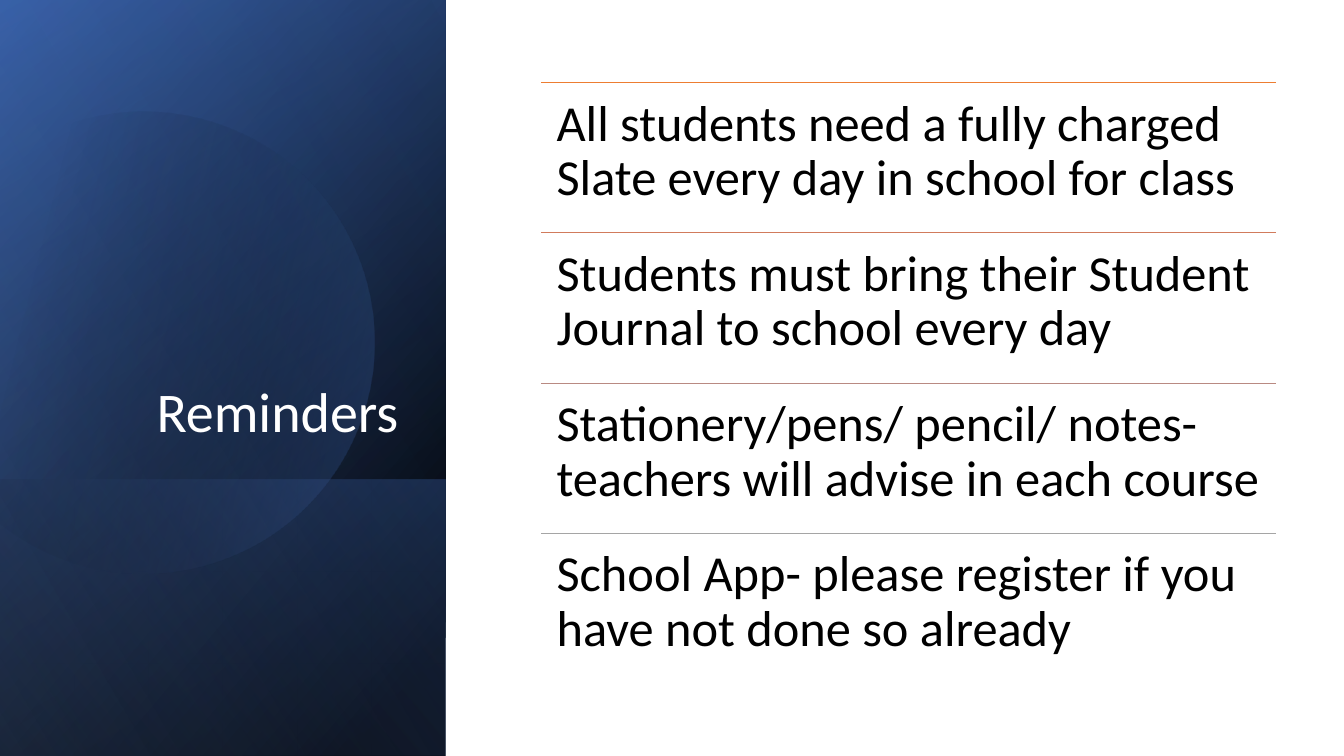
from math import cos, radians, sin

from pptx import Presentation
from pptx.dml.color import RGBColor
from pptx.enum.shapes import MSO_CONNECTOR, MSO_SHAPE
from pptx.enum.text import MSO_ANCHOR, PP_ALIGN
from pptx.oxml import parse_xml
from pptx.oxml.ns import nsdecls
from pptx.util import Inches, Pt

RECTANGLE = MSO_SHAPE.RECTANGLE
STRAIGHT = MSO_CONNECTOR.STRAIGHT
TOP, BOTTOM = MSO_ANCHOR.TOP, MSO_ANCHOR.BOTTOM
LEFT, RIGHT = PP_ALIGN.LEFT, PP_ALIGN.RIGHT

BLACK = RGBColor(0x00, 0x00, 0x00)
WHITE = RGBColor(0xFF, 0xFF, 0xFF)
NAVY = RGBColor(0x2F, 0x55, 0x97)
BLUE = RGBColor(0x44, 0x72, 0xC4)
PALE_BLUE = RGBColor(0x8F, 0xAA, 0xDC)
ORANGE = RGBColor(0xED, 0x7D, 0x31)
COPPER = RGBColor(0xD1, 0x7B, 0x5C)
ROSE = RGBColor(0xB9, 0x8A, 0x82)
GREY = RGBColor(0xA5, 0xA5, 0xA5)

deck = Presentation()
deck.slide_width, deck.slide_height = Inches(13.33), Inches(7.5)
page = deck.slides.add_slide(deck.slide_layouts[6])


def paint_gradient(shape, angle, stops):
    """Fill with (position, colour, opacity) stops, all in percent."""
    shape.shadow.inherit = False
    shape.line.fill.background()
    shape.fill.solid()
    marks = "".join(
        f'<a:gs pos="{position * 1000}"><a:srgbClr val="{colour}">'
        f'<a:alpha val="{opacity * 1000}"/></a:srgbClr></a:gs>'
        for position, colour, opacity in stops)
    gradient = parse_xml(
        f'<a:gradFill {nsdecls("a")} rotWithShape="1"><a:gsLst>{marks}</a:gsLst>'
        f'<a:lin ang="{angle * 60000}" scaled="0"/></a:gradFill>')
    properties = shape.element.spPr
    properties.replace(properties.find("{*}solidFill"), gradient)


def add_text(area, text, size, colour, align, anchor, inset):
    box = page.shapes.add_textbox(*(Inches(length) for length in area))
    frame = box.text_frame
    frame.word_wrap = True
    frame.vertical_anchor = anchor
    frame.margin_left = frame.margin_right = Inches(inset[0])
    frame.margin_top = frame.margin_bottom = Inches(inset[1])
    para = frame.paragraphs[0]
    para.alignment = align
    para.line_spacing = 0.9
    span = para.add_run()
    span.text = text
    span.font.name = "Calibri"
    span.font.size = Pt(size)
    span.font.color.rgb = colour


# Side panel: turned, mirrored gradient layers, with a disc before the last one
FULL = (-1.54, 1.54, 7.5, 4.42)
LOWER = (0.84, 3.92, 2.74, 4.42)
DISC = None
layers = [
    (FULL, 50, [(8, BLACK, 100), (100, NAVY, 100)]),
    (FULL, 30, [(0, BLACK, 0), (99, BLUE, 46)]),
    (LOWER, 130, [(2, BLUE, 29), (100, BLACK, 30)]),
    (DISC, 30, [(29, BLACK, 0), (100, BLUE, 43)]),
    (FULL, 120, [(0, BLACK, 0), (99, PALE_BLUE, 11)]),
]
RADIUS, TILT = Inches(2.29), 16.1
ARC_START, ARC_END = -117, 149
for area, angle, stops in layers:
    if area is DISC:
        # Corners at the circle's extremes set the size; one arc then joins the ends
        corners = [(RADIUS * cos(radians(turn)), RADIUS * sin(radians(turn)))
                   for turn in (ARC_START, -90, 0, 90, ARC_END)]
        builder = page.shapes.build_freeform(*corners[0])
        builder.add_line_segments(corners[1:], close=True)
        layer = builder.convert_to_shape()
        layer.left, layer.top = Inches(-0.55), Inches(1.06)
        layer.rotation = 360 - TILT
        outline = layer.element.spPr.find(".//{*}path")
        for segment in outline.findall("{*}lnTo"):
            outline.remove(segment)
        outline.insert(1, parse_xml(
            f'<a:arcTo {nsdecls("a")} wR="{RADIUS}" hR="{RADIUS}" '
            f'stAng="{ARC_START % 360 * 60000}" swAng="{(ARC_END - ARC_START) * 60000}"/>'))
    else:
        layer = page.shapes.add_shape(RECTANGLE, *(Inches(length) for length in area))
        layer.rotation = 90
        layer.element.spPr.xfrm.set("flipH", "1")
    paint_gradient(layer, angle, stops)

# Title
add_text((0.64, 1.84, 3.41, 2.62), "Reminders", 40, WHITE, RIGHT, BOTTOM, (0.1, 0.05))

# Reminder list: a rule above each row
LIST_LEFT, LIST_TOP, LIST_WIDTH, ROW = 5.37, 0.82, 7.29, 1.49
reminders = [
    (ORANGE, "All students need a fully charged Slate every day in school for class"),
    (COPPER, "Students must bring their Student Journal to school every day"),
    (ROSE, "Stationery/pens/ pencil/ notes- teachers will advise in each course"),
    (GREY, "School App- please register if you have not done so already"),
]
for index, (colour, text) in enumerate(reminders):
    top = LIST_TOP + index * ROW
    rule = page.shapes.add_connector(
        STRAIGHT, Inches(LIST_LEFT), Inches(top),
        Inches(LIST_LEFT + LIST_WIDTH), Inches(top))
    rule.line.color.rgb = colour
    rule.line.width = Pt(0.5)
    rule.element.spPr.append(parse_xml(f'<a:effectLst {nsdecls("a")}/>'))
    add_text((LIST_LEFT, top, LIST_WIDTH, ROW), text, 36, BLACK, LEFT, TOP, (0.15, 0.15))

deck.save("out.pptx")
